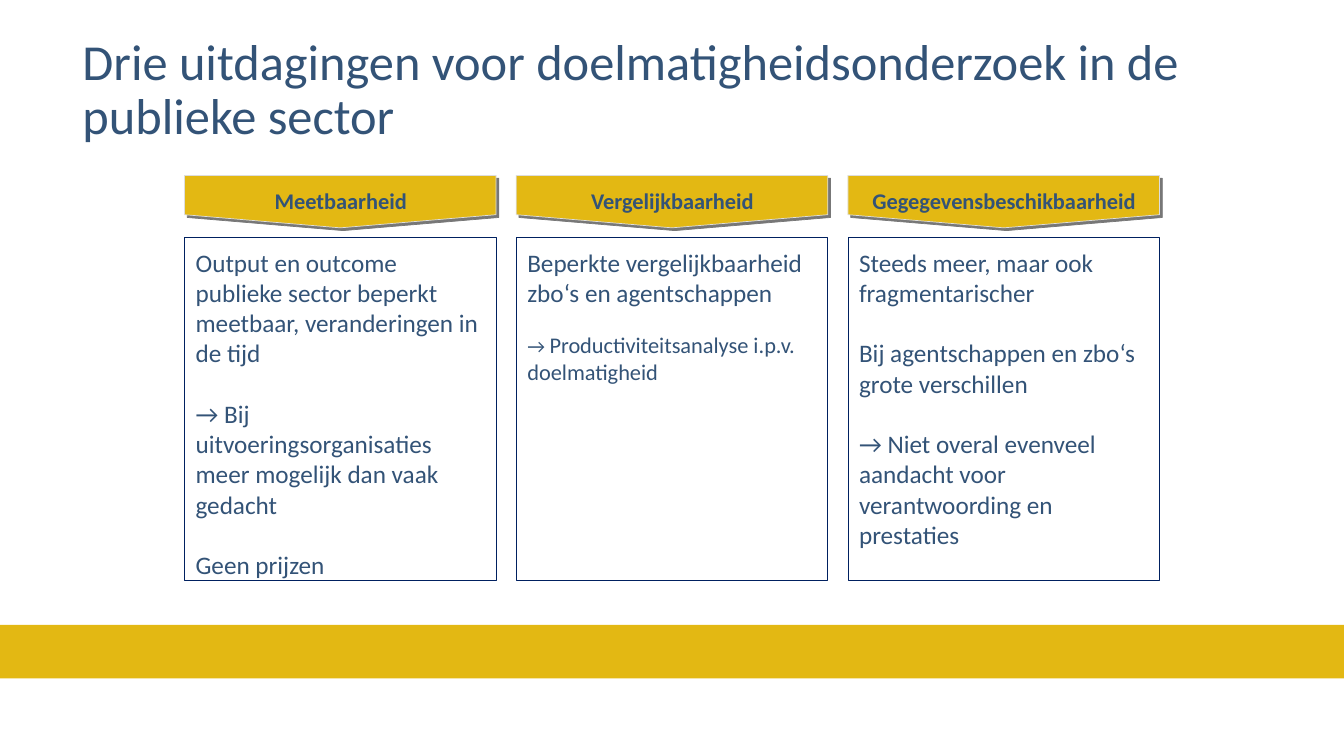
import pptx
import pptx.util
import pptx.dml.color
import pptx.enum.shapes
import pptx.enum.text
import pptx.oxml
import pptx.oxml.ns

Inches = pptx.util.Inches
Pt = pptx.util.Pt
SHAPE = pptx.enum.shapes.MSO_SHAPE
ALIGN = pptx.enum.text.PP_ALIGN
ANCHOR = pptx.enum.text.MSO_ANCHOR

GOLD = "E3B813"
BLUE = "335377"
NAVY = "002060"
GREY = "DDDDDD"
SHADE = "777777"


def color(code):
    return pptx.dml.color.RGBColor.from_string(code)


class Page:
    def __init__(self, slide, font, ink):
        self.slide = slide
        self.font = font
        self.ink = ink

    def shape(self, kind, left, top, width, height, fill=None, line=None):
        item = self.slide.shapes.add_shape(
            kind, Inches(left), Inches(top), Inches(width), Inches(height))
        item.shadow.inherit = False
        if fill:
            item.fill.solid()
            item.fill.fore_color.rgb = color(fill)
        else:
            item.fill.background()
        if line:
            item.line.color.rgb = color(line)
            item.line.width = Pt(0.5)
        else:
            item.line.fill.background()
        return item

    def arrow(self, left, top, width, height):
        x = left + (width - height) / 2
        y = top + (height - width) / 2
        item = self.shape(SHAPE.PENTAGON, x, y, height, width, GOLD, GREY)
        item.rotation = 90
        item.adjustments[0] = 0.25
        effect = item._element.spPr.find(pptx.oxml.ns.qn("a:effectLst"))
        effect.append(pptx.oxml.parse_xml(
            f'<a:outerShdw {pptx.oxml.ns.nsdecls("a")} blurRad="0" dist="{Pt(2.8)}" '
            f'dir="2700000" algn="ctr" rotWithShape="0">'
            f'<a:srgbClr val="{SHADE}"/></a:outerShdw>'))

    def text(self, left, top, width, height, paras, inset=(0, 0),
             anchor=ANCHOR.TOP, align=ALIGN.LEFT, bold=False, gap=0, space=1.0):
        box = self.slide.shapes.add_textbox(
            Inches(left), Inches(top), Inches(width), Inches(height))
        frame = box.text_frame
        frame.word_wrap = True
        frame.vertical_anchor = anchor
        frame.margin_left = frame.margin_right = Inches(inset[0])
        frame.margin_top = frame.margin_bottom = Inches(inset[1])
        for i, runs in enumerate(paras):
            para = frame.add_paragraph() if i else frame.paragraphs[0]
            para.alignment = align
            para.line_spacing = space
            if i:
                para.space_before = Pt(gap)
            for words, size in runs:
                run = para.add_run()
                run.text = words
                run.font.name = self.font
                run.font.size = Pt(size)
                run.font.bold = bold
                run.font.color.rgb = color(self.ink)

    def column(self, left, head, paras, gap):
        self.arrow(left, 1.74, 3.09, 0.52)
        self.text(left + 0.11, 2.45, 2.89, 3.3, paras, gap=gap)
        self.text(left + 0.23, 1.85, 2.64, 0.27, [[(head, 16)]],
                  anchor=ANCHOR.MIDDLE, align=ALIGN.CENTER, bold=True)
        self.shape(SHAPE.RECTANGLE, left, 2.36, 3.09, 3.4, line=NAVY)


COLUMNS = [
    ("Meetbaarheid", 21.6, [
        [("Output en outcome publieke sector beperkt meetbaar, "
          "veranderingen in de tijd", 18)],
        [("→ Bij uitvoeringsorganisaties meer mogelijk dan vaak gedacht", 18)],
        [("Geen prijzen", 18)],
    ]),
    ("Vergelijkbaarheid", 17, [
        [("Beperkte vergelijkbaarheid zbo‘s en agentschappen", 18)],
        [("→ ", 14), ("Productiviteitsanalyse i.p.v. doelmatigheid", 16)],
    ]),
    ("Gegegevensbeschikbaarheid", 21.6, [
        [("Steeds meer, maar ook fragmentarischer", 18)],
        [("Bij agentschappen en zbo‘s grote verschillen", 18)],
        [("→ Niet overal evenveel aandacht voor verantwoording en prestaties", 18)],
    ]),
]


def main():
    deck = pptx.Presentation()
    deck.slide_width = Inches(13.33)
    deck.slide_height = Inches(7.5)
    page = Page(deck.slides.add_slide(deck.slide_layouts[6]), "Calibri", BLUE)
    page.shape(SHAPE.RECTANGLE, 0, 6.2, 13.33, 0.53, GOLD)
    page.text(0.72, 0.18, 11.5, 1.45,
              [[("Drie uitdagingen voor doelmatigheidsonderzoek in de publieke sector", 36)]],
              inset=(0.1, 0.05), anchor=ANCHOR.MIDDLE, space=0.9)
    for i, (head, gap, paras) in enumerate(COLUMNS):
        page.column(1.83 + 3.29 * i, head, paras, gap)
    deck.save("out.pptx")


if __name__ == "__main__":
    main()
